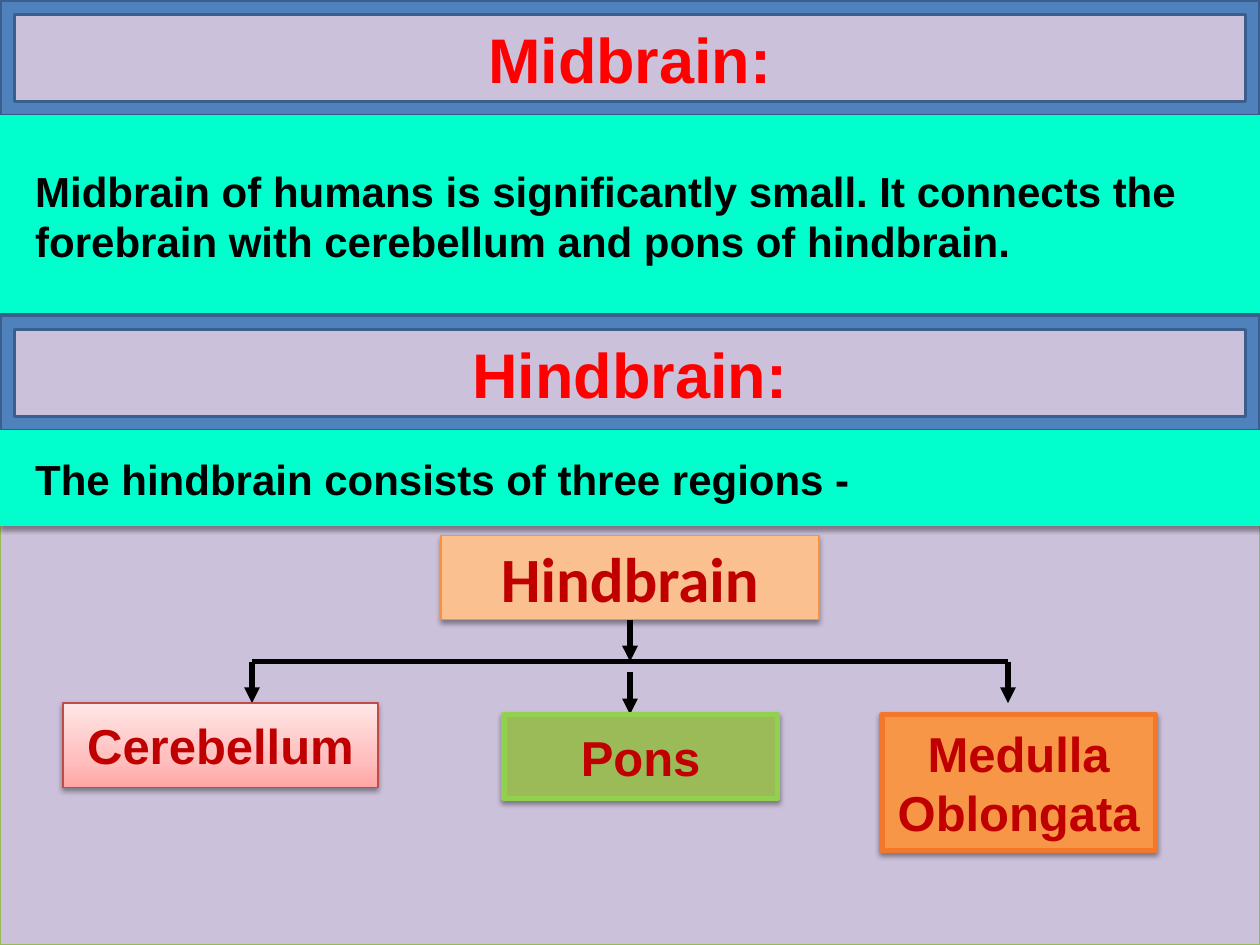
from copy import deepcopy
from dataclasses import dataclass

from lxml import etree
from pptx import Presentation
from pptx.dml.color import RGBColor
from pptx.enum.shapes import MSO_CONNECTOR, MSO_SHAPE
from pptx.enum.text import MSO_ANCHOR, PP_ALIGN
from pptx.oxml.ns import qn
from pptx.util import Inches, Pt

RECT, FRAME = MSO_SHAPE.RECTANGLE, MSO_SHAPE.FRAME
STRAIGHT = MSO_CONNECTOR.STRAIGHT
MIDDLE = MSO_ANCHOR.MIDDLE
LEFT, CENTER = PP_ALIGN.LEFT, PP_ALIGN.CENTER
BOTTOM_SITE = 2


@dataclass(frozen=True)
class Theme:
    font: str = "Arial"
    root_font: str = "Calibri"
    title_size: int = 36
    region_size: int = 28
    body_size: int = 24
    lavender: str = "CCC1DA"
    lavender_line: str = "98B955"
    frame: str = "4F81BD"
    frame_line: str = "3A5F8C"
    aqua: str = "00FFCC"
    peach: str = "FAC090"
    peach_line: str = "F69240"
    pink_stops: tuple = ((0, "FFA6A5"), (35, "FFC0BF"), (100, "FFE7E7"))
    pink_line: str = "BF4C48"
    green: str = "9BBB59"
    green_line: str = "92D050"
    orange: str = "F79646"
    orange_line: str = "F4782C"
    title: str = "FF0000"
    label: str = "C00000"
    black: str = "000000"


THEME = Theme()


@dataclass(frozen=True)
class Box:
    left: float
    top: float
    width: float
    height: float
    fill: str | tuple
    line: str
    line_width: float = 0.75
    lines: tuple = ()
    size: int = THEME.region_size
    color: str = THEME.label
    font: str = THEME.font
    align: PP_ALIGN = CENTER
    margin_left: float = 0.1
    preset: MSO_SHAPE = RECT
    shadow: bool = True


@dataclass(frozen=True)
class Line:
    x1: float
    y1: float
    x2: float
    y2: float
    arrow: bool = True


def heading(top: float, text: str) -> Box:
    return Box(0, top, 10, 0.92, THEME.frame, THEME.frame_line, 2, (text,),
               THEME.title_size, THEME.title, preset=FRAME, shadow=False)


def band(top: float, height: float, *lines: str) -> Box:
    return Box(0, top, 10, height, THEME.aqua, THEME.aqua, lines=lines,
               size=THEME.body_size, color=THEME.black, align=LEFT, margin_left=0.28)


BACKDROP = Box(0, 0, 10, 7.5, THEME.lavender, THEME.lavender_line)
SECTIONS = (
    heading(0, "Midbrain:"),
    band(0.92, 1.58, "Midbrain of humans is significantly small. It connects the",
         "forebrain with cerebellum and pons of hindbrain."),
    heading(2.5, "Hindbrain:"),
    band(3.42, 0.75, "The hindbrain consists of three regions -"),
)
ROOT = Box(3.5, 4.25, 3, 0.67, THEME.peach, THEME.peach_line, lines=("Hindbrain",),
           size=THEME.title_size, font=THEME.root_font)
REGIONS = (
    Box(0.5, 5.58, 2.5, 0.67, THEME.pink_stops, THEME.pink_line, lines=("Cerebellum",)),
    Box(4, 5.67, 2.17, 0.67, THEME.green, THEME.green_line, 3, ("Pons",)),
    Box(7, 5.67, 2.17, 1.08, THEME.orange, THEME.orange_line, 3, ("Medulla", "Oblongata")),
)
TRUNK = Line(5, 4.92, 5, 5.25)
BRANCHES = (
    Line(2, 5.25, 8, 5.25, arrow=False),
    Line(5, 5.33, 5, 5.67),
    Line(8, 5.25, 8, 5.58),
    Line(2, 5.25, 2, 5.58),
)


def rgb(value: str) -> RGBColor:
    return RGBColor.from_string(value)


def set_fill(sp, fill: str | tuple) -> None:
    """Fill with one colour, or with gradient stops running from the bottom up."""
    if isinstance(fill, str):
        sp.fill.solid()
        sp.fill.fore_color.rgb = rgb(fill)
        return
    sp.fill.gradient()
    sp.fill.gradient_angle = 90
    stops = sp._element.spPr.find(".//" + qn("a:gsLst"))
    while len(stops) < len(fill):
        stops.append(deepcopy(stops[0]))
    for stop, (position, color) in zip(sp.fill.gradient_stops, fill):
        stop.position = position / 100
        stop.color.rgb = rgb(color)


def add_shadow(sp) -> None:
    effects = sp._element.spPr.find(qn("a:effectLst"))
    shadow = etree.SubElement(effects, qn("a:outerShdw"), blurRad=str(Pt(3.1)),
                              dist=str(Pt(1.6)), dir="5400000", rotWithShape="0")
    color = etree.SubElement(shadow, qn("a:srgbClr"), val=THEME.black)
    etree.SubElement(color, qn("a:alpha"), val="38000")


def add_box(shapes, box: Box):
    sp = shapes.add_shape(box.preset, Inches(box.left), Inches(box.top),
                          Inches(box.width), Inches(box.height))
    set_fill(sp, box.fill)
    sp.line.color.rgb = rgb(box.line)
    sp.line.width = Pt(box.line_width)
    sp.shadow.inherit = False
    if box.shadow:
        add_shadow(sp)
    tf = sp.text_frame
    tf.word_wrap = True
    tf.vertical_anchor = MIDDLE
    tf.margin_left = Inches(box.margin_left)
    tf.text = "\n".join(box.lines)
    for p in tf.paragraphs:
        p.alignment = box.align
        p.font.name = box.font
        p.font.size = Pt(box.size)
        p.font.bold = True
        p.font.color.rgb = rgb(box.color)
    return sp


def add_line(shapes, line: Line):
    cxn = shapes.add_connector(STRAIGHT, Inches(line.x1), Inches(line.y1),
                               Inches(line.x2), Inches(line.y2))
    cxn.line.color.rgb = rgb(THEME.black)
    cxn.line.width = Pt(3)
    if line.arrow:
        etree.SubElement(cxn.line._get_or_add_ln(), qn("a:tailEnd"), type="triangle")
    etree.SubElement(cxn._element.spPr, qn("a:effectLst"))
    return cxn


def main() -> None:
    prs = Presentation()
    prs.slide_width, prs.slide_height = Inches(10), Inches(7.5)
    shapes = prs.slides.add_slide(prs.slide_layouts[6]).shapes
    for box in (BACKDROP, *SECTIONS):
        add_box(shapes, box)
    root = add_box(shapes, ROOT)
    add_line(shapes, TRUNK).begin_connect(root, BOTTOM_SITE)
    for line in BRANCHES:
        add_line(shapes, line)
    for box in REGIONS:
        add_box(shapes, box)
    prs.save("out.pptx")


if __name__ == "__main__":
    main()
